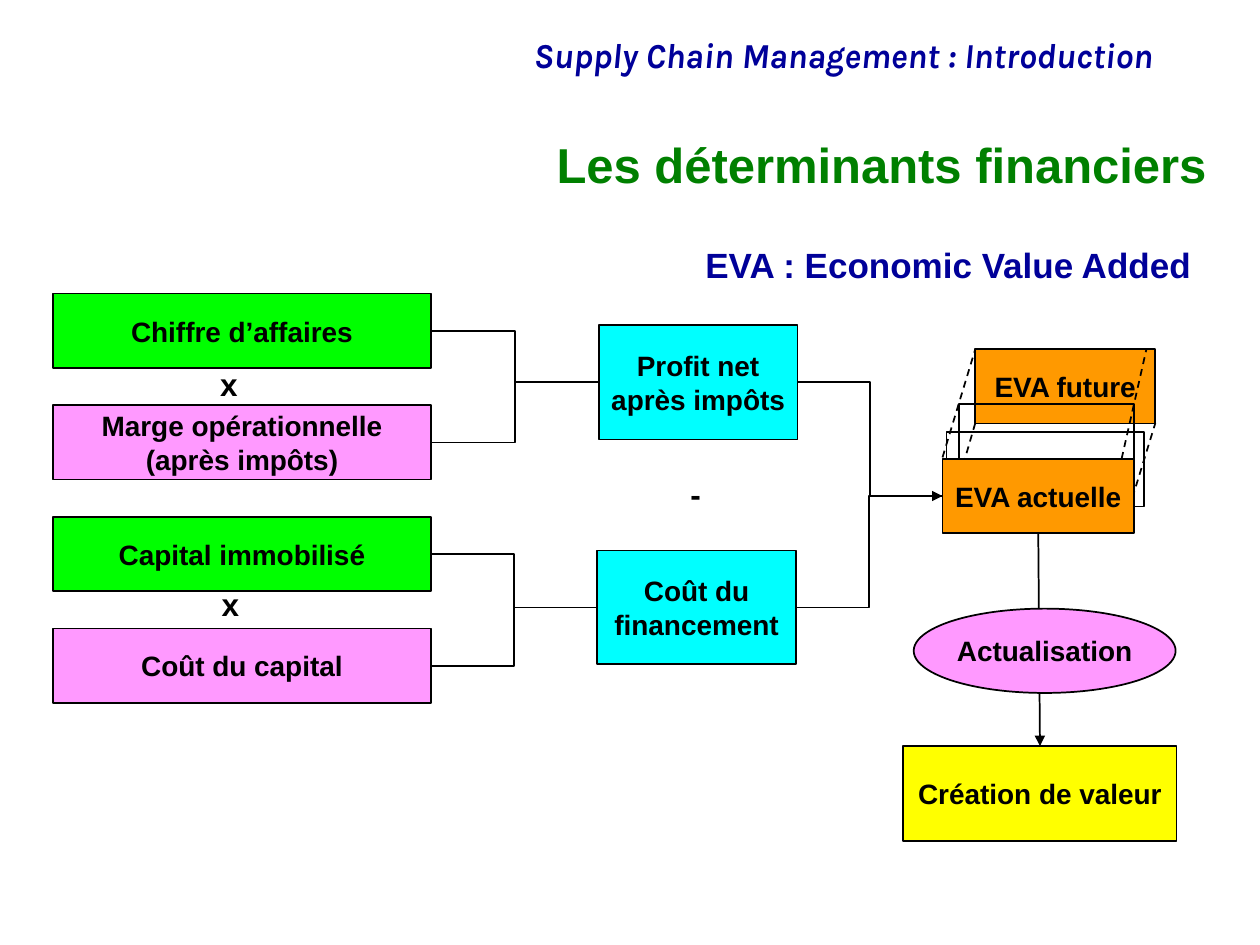
from pptx import Presentation
from pptx.dml.color import RGBColor
from pptx.enum.dml import MSO_LINE
from pptx.enum.shapes import MSO_CONNECTOR, MSO_SHAPE
from pptx.enum.text import MSO_ANCHOR, PP_ALIGN
from pptx.oxml.ns import qn
from pptx.util import Cm, Pt
from lxml import etree

RECT, OVAL = MSO_SHAPE.RECTANGLE, MSO_SHAPE.OVAL
LINE, ELBOW = MSO_CONNECTOR.STRAIGHT, MSO_CONNECTOR.ELBOW
DASH = MSO_LINE.DASH
MIDDLE = MSO_ANCHOR.MIDDLE
LEFT, CENTER, RIGHT = PP_ALIGN.LEFT, PP_ALIGN.CENTER, PP_ALIGN.RIGHT
TOP_SITE, LEFT_SITE, BOTTOM_SITE, RIGHT_SITE = range(4)

BLACK = RGBColor(0x00, 0x00, 0x00)
NAVY = RGBColor(0x00, 0x00, 0x99)
GREEN = RGBColor(0x00, 0x80, 0x00)
LIME = RGBColor(0x00, 0xFF, 0x00)
PINK = RGBColor(0xFF, 0x99, 0xFF)
CYAN = RGBColor(0x00, 0xFF, 0xFF)
ORANGE = RGBColor(0xFF, 0x99, 0x00)
YELLOW = RGBColor(0xFF, 0xFF, 0x00)


def write(frame, text, size, color, align, **style):
    """Fill a text frame, one paragraph per line of text."""
    frame.text = text
    for para in frame.paragraphs:
        para.alignment = align
        font = para.runs[0].font
        font.color.rgb = color
        looks = {"name": "Arial", "size": Pt(size), "bold": True, **style}
        for key, value in looks.items():
            setattr(font, key, value)


def trim(link, arrow=False):
    """Give a connector a plain black line, with an arrowhead if asked."""
    link.line.color.rgb = BLACK
    link.line.width = Pt(1)
    if arrow:
        head = etree.SubElement(link.line._get_or_add_ln(), qn("a:tailEnd"))
        head.set("type", "triangle")
    etree.SubElement(link._element.spPr, qn("a:effectLst"))


prs = Presentation()
prs.slide_width, prs.slide_height = Cm(25.4), Cm(19.05)
shapes = prs.slides.add_slide(prs.slide_layouts[6]).shapes

# Dashed edges lie above the future box and below the current one
edges = [
    (19, 9.22, 19.66, 7.04), (19.66, 8.53, 19.02, 10.74),
    (22.61, 9.25, 23.11, 7.04), (22.61, 10.74, 23.29, 8.53),
]

# Boxes: name, shape, fill, left, top, width, height, text
boxes = [
    ("future", RECT, ORANGE, 19.66, 7.04, 3.63, 1.5, "EVA future"),
    ("back", RECT, None, 19.08, 8.71, 3.99, 1.5, ""),
    ("middle", RECT, None, 19.33, 8.15, 3.53, 1.5, ""),
    ("current", RECT, ORANGE, 19, 9.25, 3.86, 1.5, "EVA actuelle"),
    ("profit", RECT, CYAN, 12.07, 6.55, 4.01, 2.31, "Profit net après impôts"),
    ("cost", RECT, CYAN, 12.04, 11.1, 4.01, 2.29, "Coût du financement"),
    ("value", RECT, YELLOW, 18.21, 15.04, 5.51, 1.91, "Création de valeur"),
]
factors = [
    ("sales", LIME, "Chiffre d’affaires"),
    ("margin", PINK, "Marge opérationnelle\n(après impôts)"),
    ("assets", LIME, "Capital immobilisé"),
    ("rate", PINK, "Coût du capital"),
]
for row, (name, fill, text) in enumerate(factors):
    boxes.append((name, RECT, fill, 1.07, 5.92 + 2.25 * row, 7.62, 1.5, text))
boxes.append(("discount", OVAL, PINK, 18.42, 12.27, 5.28, 1.7, "Actualisation"))

nodes = {}
for name, kind, fill, left, top, width, height, text in boxes:
    if name == "discount":
        # The arrow passes behind the ellipse
        link = shapes.add_connector(LINE, 0, 0, 0, 0)
        link.begin_connect(nodes["current"], BOTTOM_SITE)
        link.end_connect(nodes["value"], TOP_SITE)
        trim(link, arrow=True)
    box = shapes.add_shape(kind, Cm(left), Cm(top), Cm(width), Cm(height))
    nodes[name] = box
    box.shadow.inherit = False
    box.line.color.rgb = BLACK
    box.line.width = Pt(1)
    if fill is None:
        box.fill.background()
    else:
        box.fill.solid()
        box.fill.fore_color.rgb = fill
    if text:
        frame = box.text_frame
        layout = {"word_wrap": True, "vertical_anchor": MIDDLE, "margin_left": 0,
                  "margin_right": 0, "margin_top": 0, "margin_bottom": 0}
        for key, value in layout.items():
            setattr(frame, key, value)
        write(frame, text, 16, BLACK, CENTER)
    if name == "future":
        for x1, y1, x2, y2 in edges:
            edge = shapes.add_connector(LINE, Cm(x1), Cm(y1), Cm(x2), Cm(y2))
            trim(edge)
            edge.line.dash_style = DASH

# Elbow links, from right side to left side
links = [
    ("sales", "profit"), ("margin", "profit"), ("rate", "cost"),
    ("assets", "cost"), ("profit", "current"), ("cost", "current"),
]
for start, end in links:
    link = shapes.add_connector(ELBOW, 0, 0, 0, 0)
    link.begin_connect(nodes[start], RIGHT_SITE)
    link.end_connect(nodes[end], LEFT_SITE)
    trim(link, arrow=start == "cost")

# Labels: text, left, top, width, height, size, colour, alignment, wrap, style
labels = [
    ("Supply Chain Management : Introduction", 3.18, 0.64, 20.32, 1.02,
     20, NAVY, RIGHT, True, {"name": "Karla", "italic": True}),
    ("Les déterminants financiers", 4.45, 2.74, 20.12, 1.27,
     28, GREEN, RIGHT, True, {}),
    ("EVA : Economic Value Added", 13.97, 4.88, 10.44, 1.02,
     20, NAVY, LEFT, False, {}),
    ("x", 4.19, 7.32, 0.86, 0.94, 18, BLACK, LEFT, False, {}),
    ("x", 4.22, 11.76, 0.86, 0.94, 18, BLACK, LEFT, False, {}),
    ("-", 13.67, 9.53, 0.71, 0.94, 18, BLACK, LEFT, False, {}),
]
for text, left, top, width, height, size, color, align, wrap, style in labels:
    label = shapes.add_textbox(Cm(left), Cm(top), Cm(width), Cm(height))
    frame = label.text_frame
    frame.word_wrap = wrap
    frame.vertical_anchor = MIDDLE
    write(frame, text, size, color, align, **style)
    frame.paragraphs[0].line_spacing = 0.9

prs.save("out.pptx")
